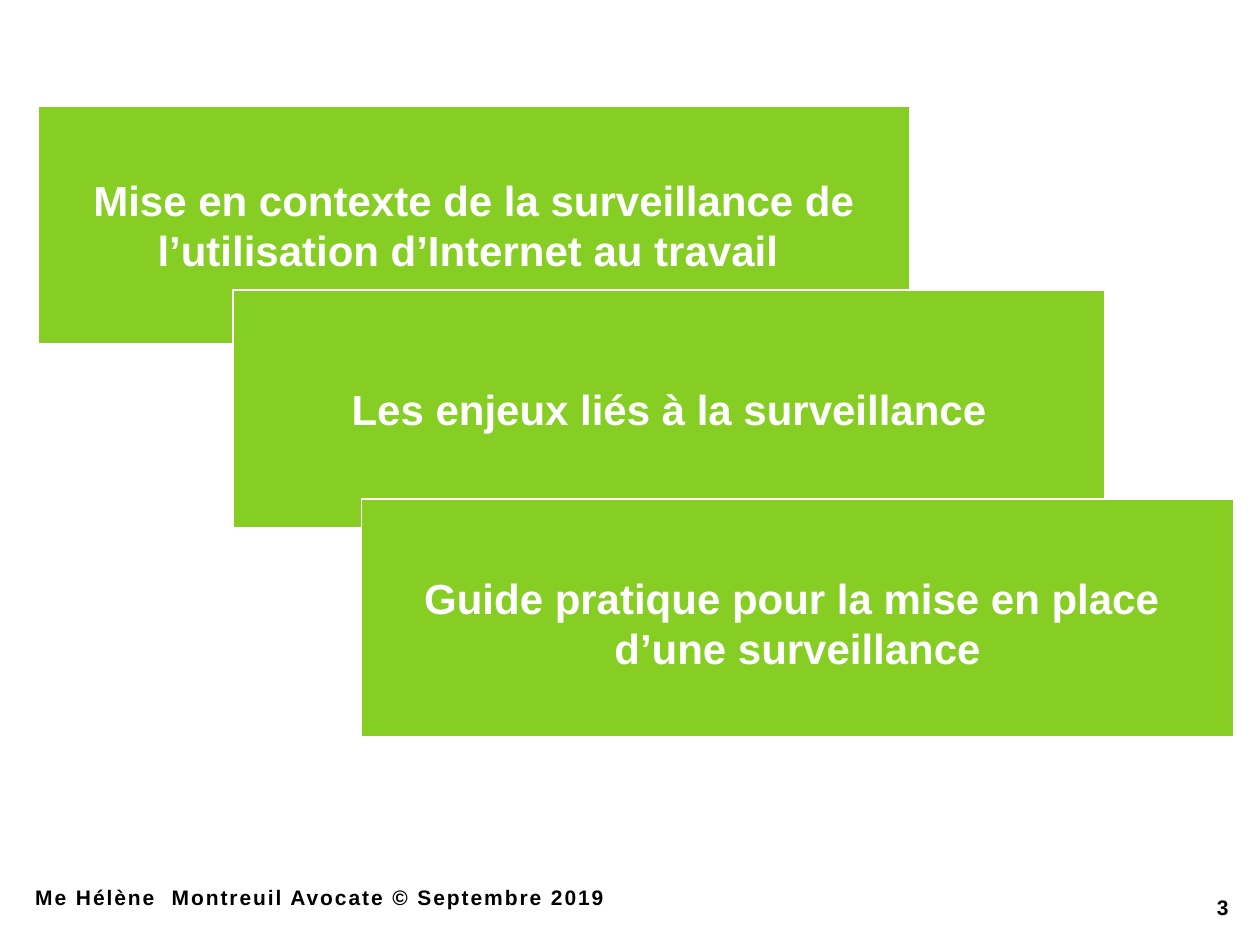
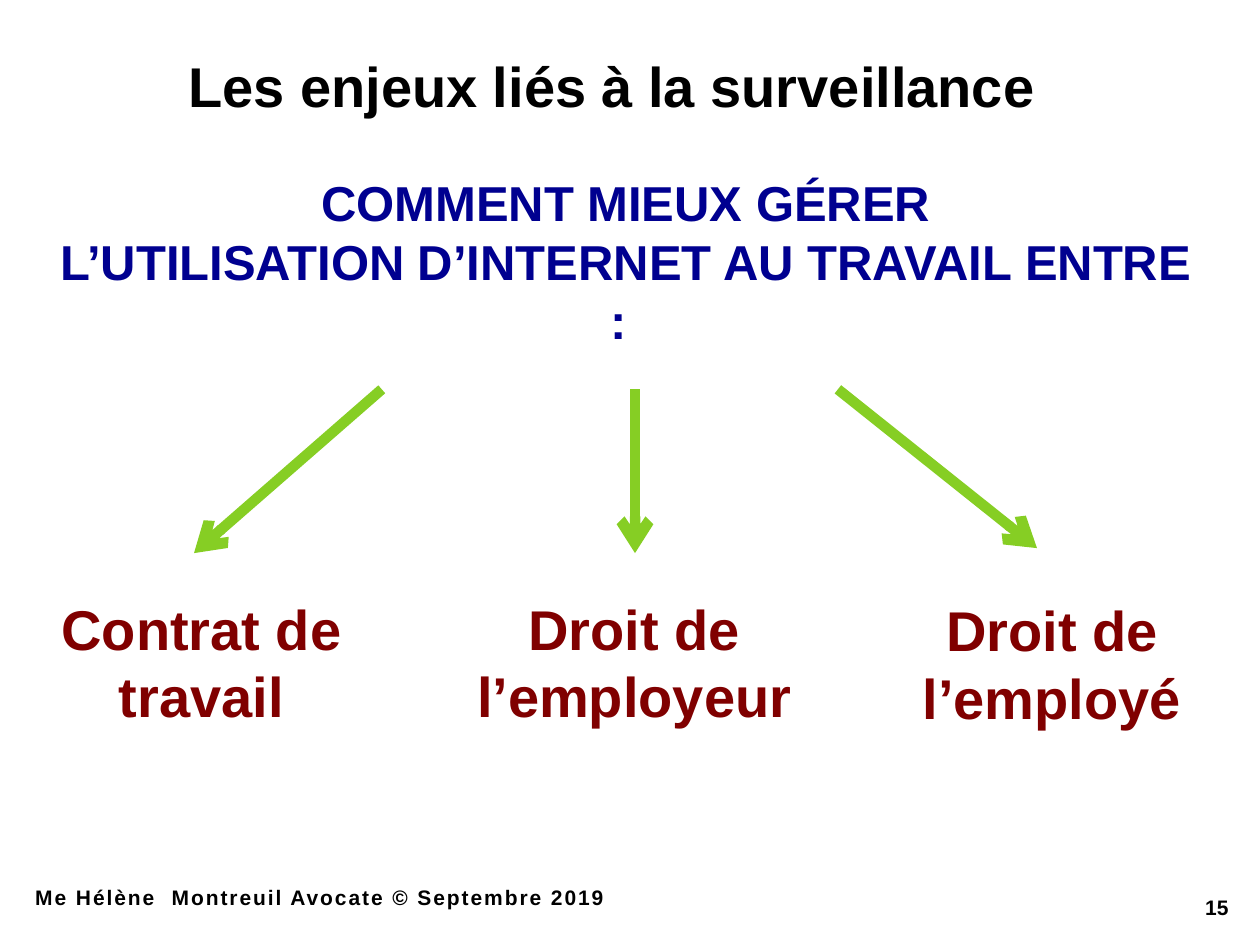
from dataclasses import dataclass

from lxml.etree import SubElement
from pptx import Presentation
from pptx.dml.color import RGBColor
from pptx.enum.shapes import MSO_CONNECTOR, MSO_SHAPE
from pptx.enum.text import MSO_ANCHOR, PP_ALIGN
from pptx.oxml.ns import qn
from pptx.util import Emu, Pt

# Shared look: 100 px to the inch
EMU_PER_PX = 9144
FONT = "Arial"
GREEN, WHITE, BLACK = "86CE24", "FFFFFF", "000000"
NAVY, MAROON = "000090", "800000"
FOOTER = "Me Hélène  Montreuil Avocate © Septembre 2019"


@dataclass(frozen=True)
class Area:
    left: int
    top: int
    width: int
    height: int


@dataclass(frozen=True)
class TextStyle:
    size: int
    color: str
    align: PP_ALIGN = PP_ALIGN.CENTER
    spacing: int = 0  # hundredths of a point


@dataclass(frozen=True)
class Topic:
    lines: tuple[str, ...]
    left: int
    top: int
    inset_top: int = 5


@dataclass(frozen=True)
class Stake:
    """A label and the arrow that points to it."""
    label: str
    area: Area
    start: tuple[int, int]
    end: tuple[int, int]


TOPIC_STYLE = TextStyle(24, WHITE)
TITLE_STYLE = TextStyle(32, BLACK)
QUESTION_STYLE = TextStyle(28, NAVY)
STAKE_STYLE = TextStyle(32, MAROON)
FOOTER_STYLE = TextStyle(12, BLACK, PP_ALIGN.LEFT, 110)
NUMBER_STYLE = TextStyle(12, BLACK, PP_ALIGN.RIGHT)

TOPIC_WIDTH, TOPIC_HEIGHT = 692, 189
TOPICS = (
    Topic(("Mise en contexte de la surveillance de l’utilisation "
           "d’Internet au travail ",), 30, 84),
    Topic(("Les enjeux liés à la surveillance",), 185, 230),
    Topic(("Guide pratique pour la mise en place ", "d’une surveillance"),
          287, 396, inset_top=12),
)
STAKES = (
    Stake("Contrat de travail", Area(28, 467, 264, 118), (303, 309), (154, 439)),
    Stake("Droit de l’employeur", Area(350, 467, 307, 118), (504, 309), (504, 439)),
    Stake("Droit de l’employé", Area(697, 468, 276, 118), (665, 309), (823, 435)),
)


def px(length: int) -> Emu:
    return Emu(length * EMU_PER_PX)


def rgb(color: str) -> RGBColor:
    return RGBColor.from_string(color)


def place(area: Area) -> tuple[Emu, ...]:
    return px(area.left), px(area.top), px(area.width), px(area.height)


def write(frame, lines: tuple[str, ...], style: TextStyle) -> None:
    """Fill a text frame, one paragraph for each line."""
    frame.word_wrap = True
    for index, line in enumerate(lines):
        para = frame.add_paragraph() if index else frame.paragraphs[0]
        para.alignment = style.align
        span = para.add_run()
        span.text = line
        span.font.name = FONT
        span.font.size = Pt(style.size)
        span.font.bold = True
        span.font.color.rgb = rgb(style.color)
        if style.spacing:
            span.font._element.set("spc", str(style.spacing))


def add_text(page, area: Area, lines: tuple[str, ...], style: TextStyle):
    frame = page.shapes.add_textbox(*place(area)).text_frame
    write(frame, lines, style)
    return frame


def add_topic(page, topic: Topic) -> None:
    area = Area(topic.left, topic.top, TOPIC_WIDTH, TOPIC_HEIGHT)
    box = page.shapes.add_shape(MSO_SHAPE.RECTANGLE, *place(area))
    box.shadow.inherit = False
    box.fill.solid()
    box.fill.fore_color.rgb = rgb(GREEN)
    box.line.color.rgb = rgb(WHITE)
    box.line.width = Pt(1)
    box.text_frame.vertical_anchor = MSO_ANCHOR.MIDDLE
    box.text_frame.margin_top = px(topic.inset_top)
    write(box.text_frame, topic.lines, TOPIC_STYLE)


def add_arrow(page, start: tuple[int, int], end: tuple[int, int]) -> None:
    arrow = page.shapes.add_connector(
        MSO_CONNECTOR.STRAIGHT, *map(px, start), *map(px, end))
    arrow.line.color.rgb = rgb(GREEN)
    arrow.line.width = Pt(6)
    SubElement(arrow.line._get_or_add_ln(), qn("a:tailEnd"), type="arrow")
    SubElement(arrow._element.spPr, qn("a:effectLst"))


def add_footer(page, number: int) -> None:
    for area, text, style in (
        (Area(925, 702, 50, 28), str(number), NUMBER_STYLE),
        (Area(28, 698, 543, 24), FOOTER, FOOTER_STYLE),
    ):
        frame = add_text(page, area, (text,), style)
        frame.vertical_anchor = MSO_ANCHOR.BOTTOM
        frame.margin_left = frame.margin_right = frame.margin_bottom = 0


def add_page(deck):
    return deck.slides.add_slide(deck.slide_layouts[6])


def build_outline(deck) -> None:
    page = add_page(deck)
    for topic in TOPICS:
        add_topic(page, topic)
    add_footer(page, 3)


def build_stakes(deck) -> None:
    page = add_page(deck)
    # Title and question
    add_text(page, Area(51, 36, 882, 64),
             ("Les enjeux liés à la surveillance ",), TITLE_STYLE)
    add_text(page, Area(34, 132, 925, 150),
             ("COMMENT MIEUX GÉRER",
              "L’UTILISATION D’INTERNET AU TRAVAIL ENTRE : "), QUESTION_STYLE)
    # Three stakes
    for stake in STAKES:
        add_arrow(page, stake.start, stake.end)
        add_text(page, stake.area, (stake.label,), STAKE_STYLE)
    add_footer(page, 15)


def main() -> None:
    deck = Presentation()
    deck.slide_width, deck.slide_height = px(1000), px(750)
    build_outline(deck)
    build_stakes(deck)
    deck.save("out.pptx")


if __name__ == "__main__":
    main()
